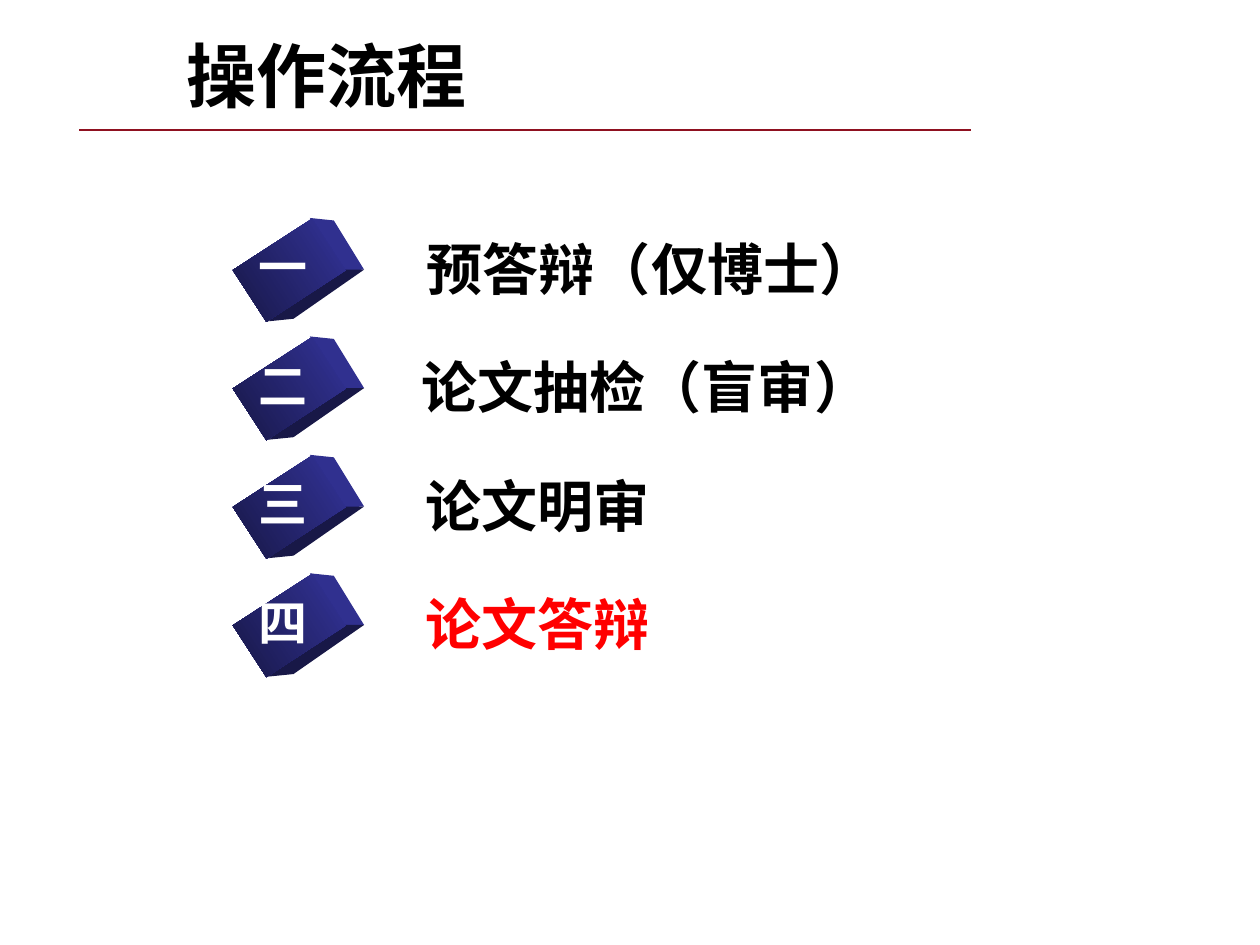
"""Build the workflow slide with four numbered thesis steps."""
import lxml.etree
import pptx
import pptx.dml.color
import pptx.enum.shapes
import pptx.enum.text
import pptx.oxml.ns
import pptx.util

Inches = pptx.util.Inches


def color(value):
    return pptx.dml.color.RGBColor.from_string(value)


def add_text(text, left, top, width, height, size, font, fill, wrap=False):
    box = slide.shapes.add_textbox(Inches(left), Inches(top), Inches(width), Inches(height))
    box.text_frame.word_wrap = wrap
    box.text_frame.auto_size = pptx.enum.text.MSO_AUTO_SIZE.SHAPE_TO_FIT_TEXT
    paragraph = box.text_frame.paragraphs[0]
    paragraph.text = text
    paragraph.font.size = pptx.util.Pt(size)
    paragraph.font.name = font
    paragraph.font.bold = True
    paragraph.font.color.rgb = color(fill)


deck = pptx.Presentation()
deck.slide_width = Inches(10)
deck.slide_height = Inches(7.5)
slide = deck.slides.add_slide(deck.slide_layouts[6])

title_rule = slide.shapes.add_connector(
    pptx.enum.shapes.MSO_CONNECTOR.STRAIGHT, Inches(0.63), Inches(1.03), Inches(7.71), Inches(1.03))
title_rule.line.color.rgb = color("8F1120")
title_rule.line.width = pptx.util.Pt(1.25)
lxml.etree.SubElement(title_rule._element.spPr, pptx.oxml.ns.qn("a:effectLst"))

add_text("操作流程", 1.38, 0.21, 5.12, 0.77, 40, "Noto Sans CJK JP", "000000", wrap=True)

steps = [
    ("一", "预答辩（仅博士）", 3.29, 3.79, "000000"),
    ("二", "论文抽检（盲审）", 3.25, 3.79, "000000"),
    ("三", "论文明审", 3.28, 2, "000000"),
    ("四", "论文答辩", 3.28, 2, "FF0000"),
]
side_faces = [
    ("30308F", [(2.46, -0.04), (2.65, -0.02), (2.89, 0.37), (2.7, 0.38)]),
    ("181847", [(2.7, 0.37), (2.89, 0.37), (2.33, 0.76), (2.13, 0.78)]),
]

for index, (numeral, label, label_left, label_width, label_color) in enumerate(steps):
    top = 1.77 + 0.94 * index

    for face_color, corners in side_faces:
        points = [(Inches(x), Inches(top + y)) for x, y in corners]
        outline = slide.shapes.build_freeform(*points[0])
        outline.add_line_segments(points[1:], close=True)
        face = outline.convert_to_shape()
        face.shadow.inherit = False
        face.fill.solid()
        face.fill.fore_color.rgb = color(face_color)
        face.line.fill.background()

    front = slide.shapes.add_shape(
        pptx.enum.shapes.MSO_SHAPE.RECTANGLE, Inches(2.05), Inches(top), Inches(0.49), Inches(0.75))
    front.rotation = 57
    front.shadow.inherit = False
    front.fill.gradient()
    front.fill.gradient_angle = 270
    for stop, stop_color in zip(front.fill.gradient_stops, ("333399", "181847")):
        stop.color.rgb = color(stop_color)
    front.line.fill.background()

    add_text(numeral, 1.95, top + 0.06, 0.59, 0.57, 28, "Times New Roman", "FFFFFF")
    add_text(label, label_left, top + 0.04, label_width, 0.64, 32, "Times New Roman", label_color)

deck.save("out.pptx")
